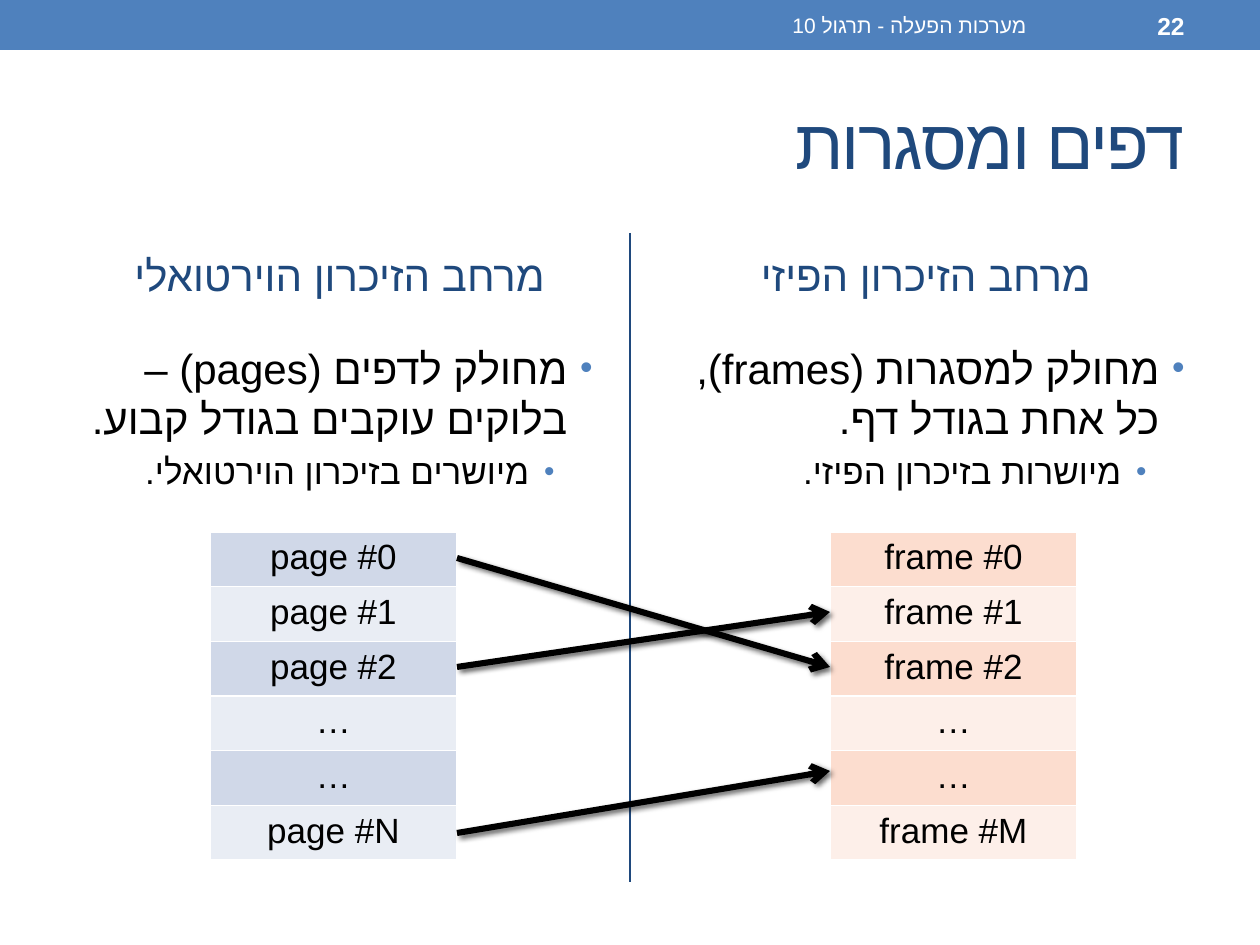
from lxml.etree import SubElement
from pptx import Presentation
from pptx.dml.color import RGBColor
from pptx.enum.shapes import MSO_CONNECTOR, MSO_SHAPE
from pptx.enum.text import MSO_ANCHOR, PP_ALIGN
from pptx.oxml import parse_xml
from pptx.oxml.ns import nsdecls, qn
from pptx.util import Pt

EMU_PER_PX = 914400 / 126
FONT = "Arial"

BLUE = RGBColor(0x4F, 0x81, 0xBD)
NAVY = RGBColor(0x1F, 0x49, 0x7D)
WHITE = RGBColor(0xFF, 0xFF, 0xFF)
BLACK = RGBColor(0x00, 0x00, 0x00)
PAGE_BANDS = (RGBColor(0xD0, 0xD8, 0xE8), RGBColor(0xE9, 0xED, 0xF4))
FRAME_BANDS = (RGBColor(0xFC, 0xDD, 0xCF), RGBColor(0xFD, 0xEF, 0xE9))


def px(length):
    return round(length * EMU_PER_PX)


class SlideBuilder:
    def __init__(self, slide):
        self.slide = slide

    def bar(self, left, top, width, height, color):
        shape = self.slide.shapes.add_shape(
            MSO_SHAPE.RECTANGLE, px(left), px(top), px(width), px(height))
        shape.shadow.inherit = False
        shape.fill.solid()
        shape.fill.fore_color.rgb = color
        shape.line.fill.background()

    def style(self, paragraph, size, color, align, bold=False):
        paragraph.alignment = align
        font = paragraph.font
        font.name, font.size, font.bold = FONT, Pt(size), bold
        font.color.rgb = color
        # Hebrew letters take the complex-script font
        defaults = paragraph._p.pPr.find(qn("a:defRPr"))
        SubElement(defaults, qn("a:cs"), typeface=FONT)
        return defaults

    def text_frame(self, left, top, width, height, anchor):
        box = self.slide.shapes.add_textbox(px(left), px(top), px(width), px(height))
        frame = box.text_frame
        frame.word_wrap = True
        frame.vertical_anchor = anchor
        return frame

    def text(self, left, top, width, height, text, size, color,
             align=PP_ALIGN.RIGHT, bold=False, spacing=0):
        frame = self.text_frame(left, top, width, height, MSO_ANCHOR.MIDDLE)
        paragraph = frame.paragraphs[0]
        paragraph.text = text
        defaults = self.style(paragraph, size, color, align, bold)
        paragraph._p.pPr.set("rtl", "1")
        if spacing:
            defaults.set("spc", str(spacing * 100))

    def bullets(self, left, top, width, height, items):
        frame = self.text_frame(left, top, width, height, MSO_ANCHOR.TOP)
        levels = ((24, 25), (20, 63))  # font size, indent
        for level, (text, (size, indent)) in enumerate(zip(items, levels)):
            paragraph = frame.add_paragraph() if level else frame.paragraphs[0]
            paragraph.text = text
            paragraph.level = level
            paragraph.space_before = Pt(size * 0.2)
            defaults = self.style(paragraph, size, BLACK, PP_ALIGN.RIGHT)
            properties = paragraph._p.pPr
            properties.set("rtl", "1")
            properties.set("marL", str(px(indent)))
            properties.set("indent", str(px(-25)))
            for content in (f'buClr {nsdecls("a")}><a:srgbClr val="{BLUE}"/></a:buClr>',
                            f'buSzPct {nsdecls("a")} val="85000"/>',
                            f'buFont {nsdecls("a")} typeface="{FONT}"/>',
                            f'buChar {nsdecls("a")} char="•"/>'):
                defaults.addprevious(parse_xml(f"<a:{content}"))

    def table(self, left, top, width, row_height, labels, bands):
        shape = self.slide.shapes.add_table(
            len(labels), 1, px(left), px(top), px(width), px(row_height * len(labels)))
        table = shape.table
        table.first_row = table.horz_banding = False
        for row, label in enumerate(labels):
            cell = table.cell(row, 0)
            cell.text = label
            self.style(cell.text_frame.paragraphs[0], 20, BLACK, PP_ALIGN.CENTER)
            cell.fill.solid()
            cell.fill.fore_color.rgb = bands[row % 2]
            properties = cell._tc.get_or_add_tcPr()
            for position, side in enumerate(("lnL", "lnR", "lnT", "lnB")):
                properties.insert(position, parse_xml(
                    f'<a:{side} {nsdecls("a")} w="12700"><a:solidFill>'
                    f'<a:srgbClr val="{WHITE}"/></a:solidFill></a:{side}>'))

    def line(self, start, end, color, width, arrow=False):
        connector = self.slide.shapes.add_connector(
            MSO_CONNECTOR.STRAIGHT, *map(px, start + end))
        connector.line.color.rgb = color
        connector.line.width = Pt(width)
        properties = connector._element.spPr
        effects = SubElement(properties, qn("a:effectLst"))
        if arrow:
            SubElement(properties.find(qn("a:ln")), qn("a:tailEnd"), type="arrow")
            shadow = SubElement(effects, qn("a:outerShdw"), blurRad=str(Pt(3)),
                                dist=str(Pt(2)), dir=str(45 * 60000))
            shade = SubElement(shadow, qn("a:srgbClr"), val=str(BLACK))
            SubElement(shade, qn("a:alpha"), val="60000")


def main():
    presentation = Presentation()
    presentation.slide_width, presentation.slide_height = px(1260), px(945)
    slide = presentation.slides.add_slide(presentation.slide_layouts[6])
    builder = SlideBuilder(slide)

    # Header bar, divider and title
    builder.bar(0, 0, 1260, 50, BLUE)
    builder.line((630, 233), (630, 882), NAVY, 1.5)
    builder.text(63, 73, 1134, 136, "דפים ומסגרות", 40, NAVY, spacing=-1)
    builder.text(472, 3, 567, 45, "מערכות הפעלה - תרגול 10", 12, WHITE)
    builder.text(1050, 3, 147, 45, "22", 14, WHITE, bold=True)

    # Virtual memory on the left, physical memory on the right
    columns = (
        (63, "מרחב הזיכרון הוירטואלי ",
         ("מחולק לדפים (pages) – בלוקים עוקבים בגודל קבוע.",
          "מיושרים בזיכרון הוירטואלי."),
         210, "page", "N", PAGE_BANDS),
        (655, "מרחב הזיכרון הפיזי",
         ("מחולק למסגרות (frames), כל אחת בגודל דף.",
          "מיושרות בזיכרון הפיזי."),
         830, "frame", "M", FRAME_BANDS),
    )
    for left, heading, items, table_left, unit, last, bands in columns:
        builder.text(left, 231, 542, 88, heading, 24, NAVY, PP_ALIGN.CENTER)
        builder.bullets(left, 336, 542, 544, items)
        labels = [f"{unit} #{number}" for number in range(3)]
        labels += ["…", "…", f"{unit} #{last}"]
        builder.table(table_left, 532, 247, 51, labels, bands)

    # Mapping from pages to frames
    for page_y, frame_y in ((558, 667), (667, 612), (833, 771)):
        builder.line((457, page_y), (830, frame_y), BLACK, 3.5, arrow=True)

    presentation.save("out.pptx")


if __name__ == "__main__":
    main()
